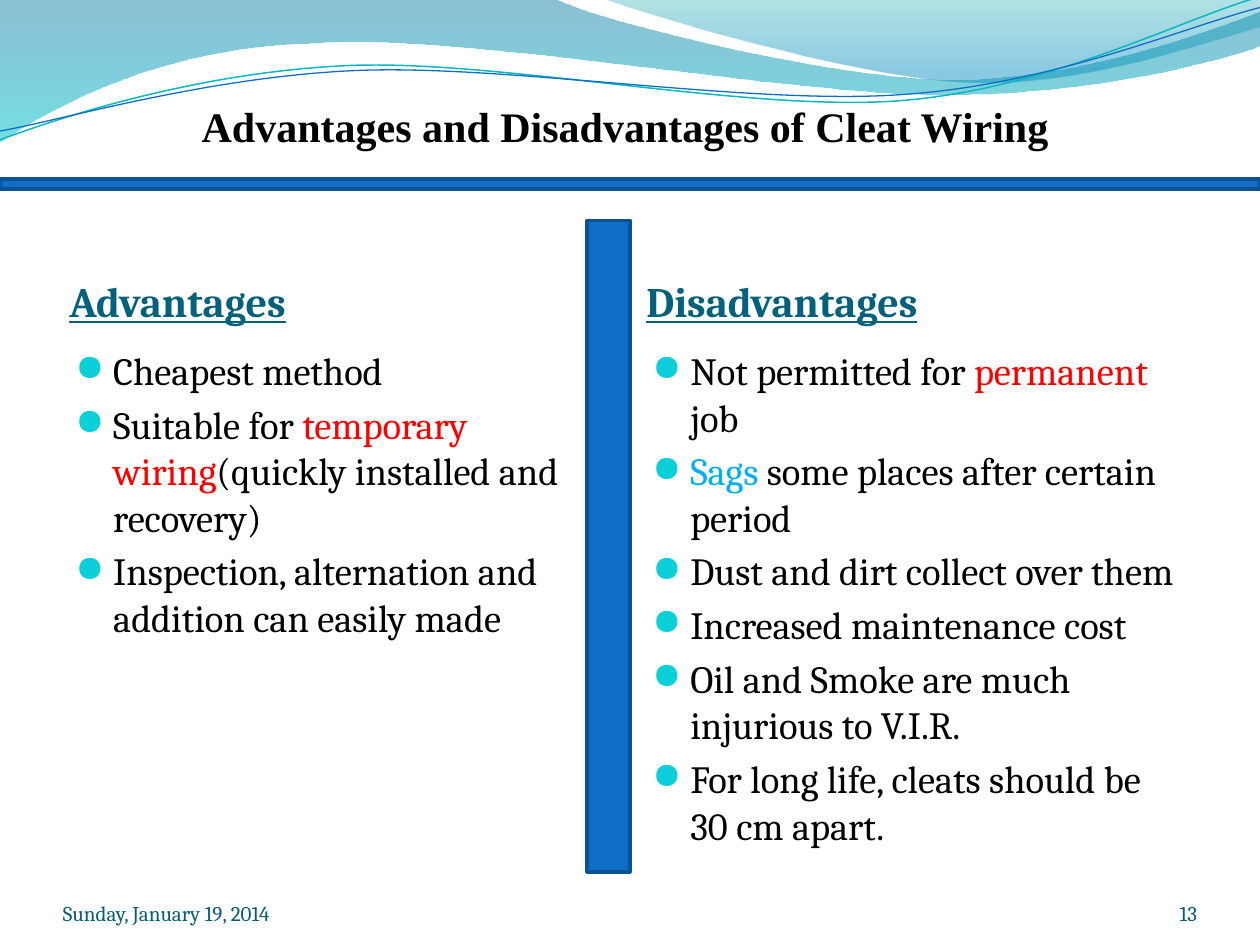
from math import cos, radians, sin

from lxml.etree import SubElement
from pptx import Presentation
from pptx.dml.color import RGBColor
from pptx.enum.shapes import MSO_SHAPE
from pptx.enum.text import MSO_ANCHOR as ANCHOR, MSO_AUTO_SIZE as AUTO_SIZE, PP_ALIGN as ALIGN
from pptx.oxml.ns import qn
from pptx.util import Inches, Pt

COLORS = {
    "black": "000000", "red": "FF0000", "sky": "00B0F0", "heading": "04617B",
    "footer": "045D75", "bullet": "0BD0D9", "bar": "0F6FC6", "bar_edge": "0B5292",
    "teal_line": "0AB8BF", "wave_blue": "0074A1", "wave_cyan": "00C6CF",
    "crest_teal": "00A1A9", "crest_blue": "008BBF",
}

TITLE = "Advantages and Disadvantages of Cleat Wiring"
DATE, NUMBER = "Sunday, January 19, 2014", "13"

# Each bullet is a list of (text, color) runs.
COLUMNS = [
    (0.5, "Advantages", [
        [("Cheapest method", "black")],
        [("Suitable for ", "black"), ("temporary wiring", "red"),
         ("(quickly installed and recovery)", "black")],
        [("Inspection, alternation and addition can easily made", "black")],
    ]),
    (5.08, "Disadvantages", [
        [("Not permitted for ", "black"), ("permanent ", "red"), ("job", "black")],
        [("Sags ", "sky"), ("some places after certain period", "black")],
        [("Dust and dirt collect over them", "black")],
        [("Increased maintenance cost", "black")],
        [("Oil and Smoke are much injurious to V.I.R.", "black")],
        [("For long life, cleats should be 30 cm apart.", "black")],
    ]),
]
COLUMN_WIDTH = 4.42

# Outlines: a start point, then line targets (2 numbers) or Bezier curves (6 numbers).
# Gradient stops are (position, color, opacity in percent).
WAVES = [
    ([(0, 0), (4.4, -0.01), (4.76, 0.17, 6.64, 0.63, 7.58, 0.63),
      (8.53, 0.63, 9.58, 0.26, 10, 0.09), (10.01, 0.36),
      (9.83, 0.44, 8.7, 0.76, 7.46, 0.75), (6.22, 0.75, 3.82, 0.28, 2.57, 0.34),
      (1.29, 0.36, 0.46, 0.83, -0.01, 1.13), (0, 0)],
     [(0, "wave_blue", 45), (1, "wave_cyan", 55)]),
    ([(4.79, -0.01), (5.09, 0.11, 6.82, 0.62, 7.69, 0.65),
      (8.56, 0.69, 9.61, 0.32, 10, 0.21), (10, 0), (4.79, -0.01)],
     [(0, "crest_teal", 30), (0.8, "crest_blue", 45)]),
]
# Ripples: outline as seen, center of rotation, color, line width.
RIPPLES = [
    ([(0, 1.11), (0.48, 0.93, 1.58, 0.57, 2.77, 0.52),
      (3.95, 0.47, 5.93, 0.89, 7.13, 0.8), (8.33, 0.71, 9.38, 0.15, 9.98, -0.02)],
     (4.99, 0.58), "teal_line", 0.85),
    ([(0, 1.04), (0.47, 0.96, 1.64, 0.61, 2.83, 0.56),
      (4.03, 0.51, 5.97, 0.84, 7.17, 0.75), (8.36, 0.67, 9.41, 0.21, 10, 0.06)],
     (5, 0.59), "bar", 0.75),
]
RIPPLE_TILT = -2.7
BARS = [(0, 1.42, 10, 0.08), (4.66, 1.75, 0.34, 5.17)]


def rgb(name):
    return RGBColor.from_string(COLORS[name])


def turn(outline, center, degrees):
    """Rotate every point of an outline clockwise about a center."""
    cx, cy = center
    c, s = cos(radians(degrees)), sin(radians(degrees))
    turned = []
    for seg in outline:
        pairs = zip(seg[::2], seg[1::2])
        turned.append(tuple(v for x, y in pairs for v in (
            cx + (x - cx) * c - (y - cy) * s, cy + (x - cx) * s + (y - cy) * c)))
    return turned


def add_outline(slide, outline, close):
    """Build a freeform through all points, then join control points into curves."""
    points = [(Inches(x), Inches(y)) for seg in outline
              for x, y in zip(seg[::2], seg[1::2])]
    builder = slide.shapes.build_freeform(*points[0])
    builder.add_line_segments(points[1:], close=close)
    s = builder.convert_to_shape()
    s.shadow.inherit = False
    lines = iter(list(s._element.spPr.iter(qn("a:lnTo"))))
    for seg in outline[1:]:
        first = next(lines)
        if len(seg) == 6:
            first.tag = qn("a:cubicBezTo")
            for _ in range(2):
                line = next(lines)
                first.append(line[0])
                line.getparent().remove(line)
    return s


def add_wave(slide, outline, stops):
    s = add_outline(slide, outline, True)
    s.line.fill.background()
    s.fill.gradient()
    s.fill.gradient_angle = 270  # counter-clockwise, so top to bottom
    for stop, (position, color, _) in zip(s.fill.gradient_stops, stops):
        stop.position = position
        stop.color.rgb = rgb(color)
    for clr, (_, _, opacity) in zip(s._element.spPr.iter(qn("a:srgbClr")), stops):
        SubElement(clr, qn("a:alpha"), val=str(opacity * 1000))


def add_ripple(slide, outline, center, color, width):
    s = add_outline(slide, turn(outline, center, -RIPPLE_TILT), False)
    s.rotation = RIPPLE_TILT
    s.fill.background()
    s.line.color.rgb = rgb(color)
    s.line.width = Pt(width)


def add_bar(slide, box):
    s = slide.shapes.add_shape(MSO_SHAPE.RECTANGLE, *map(Inches, box))
    s.shadow.inherit = False
    s.fill.solid()
    s.fill.fore_color.rgb = rgb("bar")
    s.line.color.rgb = rgb("bar_edge")
    s.line.width = Pt(2)


def add_bullet(p):
    pPr = p._p.get_or_add_pPr()
    pPr.set("marL", str(Inches(0.3)))
    pPr.set("indent", str(-Inches(0.3)))
    SubElement(SubElement(pPr, qn("a:buClr")), qn("a:srgbClr"), val=COLORS["bullet"])
    SubElement(pPr, qn("a:buSzPct"), val="95000")
    SubElement(pPr, qn("a:buFont"), typeface="OpenSymbol")
    SubElement(pPr, qn("a:buChar"), char="●")


def add_text(slide, box, text, *, size, color="black", font="Cambria", bold=False,
             underline=False, align=ALIGN.LEFT, anchor=ANCHOR.TOP, grow=False,
             insets=(0, 0, 0, 0), bullets=False, before=0):
    """Add a text box; text is a string or a list of paragraphs of (text, color) runs."""
    tf = slide.shapes.add_textbox(*map(Inches, box)).text_frame
    tf.word_wrap = True
    tf.auto_size = AUTO_SIZE.SHAPE_TO_FIT_TEXT if grow else AUTO_SIZE.NONE
    tf.vertical_anchor = anchor
    tf.margin_left, tf.margin_top, tf.margin_right, tf.margin_bottom = map(Inches, insets)
    paragraphs = [[(text, color)]] if isinstance(text, str) else text
    for i, runs in enumerate(paragraphs):
        p = tf.add_paragraph() if i else tf.paragraphs[0]
        p.alignment = align
        p.space_before = Pt(before)
        if bullets:
            p.line_spacing = 1.01
            add_bullet(p)
        for content, run_color in runs:
            r = p.add_run()
            r.text = content
            r.font.name, r.font.size = font, Pt(size)
            r.font.bold, r.font.underline = bold, underline
            r.font.color.rgb = rgb(run_color)


def main():
    prs = Presentation()
    prs.slide_width, prs.slide_height = Inches(10), Inches(7.5)
    slide = prs.slides.add_slide(prs.slide_layouts[6])

    for wave in WAVES:
        add_wave(slide, *wave)
    for ripple in RIPPLES:
        add_ripple(slide, *ripple)
    for left, heading, points in COLUMNS:
        add_text(slide, (left, 2.03, COLUMN_WIDTH, 0.72), heading, size=24,
                 color="heading", bold=True, underline=True, anchor=ANCHOR.MIDDLE,
                 insets=(0.05, 0, 0.05, 0), before=4)
        add_text(slide, (left, 2.75, COLUMN_WIDTH, 4.21), points, size=22,
                 insets=(0.1, 0, 0.1, 0.05), bullets=True, before=4)
    for bar in BARS:
        add_bar(slide, bar)
    add_text(slide, (0.75, 0.75, 8.42, 0.5), TITLE, size=24, font="Times New Roman",
             bold=True, align=ALIGN.CENTER, grow=True, insets=(0.1, 0.05, 0.1, 0.05))
    footer = {"size": 12, "color": "footer", "anchor": ANCHOR.BOTTOM}
    add_text(slide, (0.5, 6.95, 2.33, 0.4), DATE, **footer)
    add_text(slide, (8.67, 6.95, 0.83, 0.4), NUMBER, align=ALIGN.RIGHT, **footer)

    prs.save("out.pptx")


if __name__ == "__main__":
    main()
